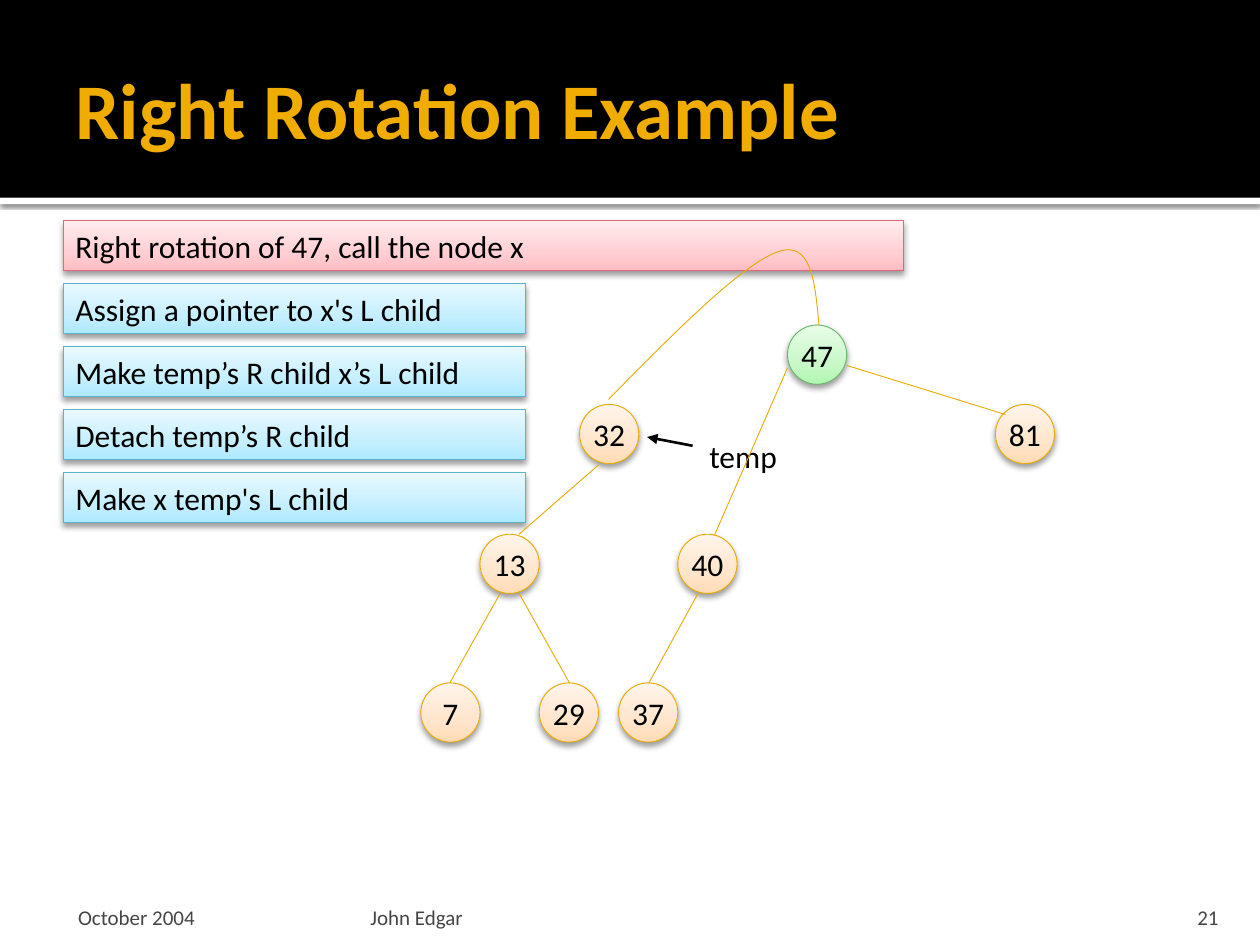
from copy import deepcopy
from dataclasses import dataclass

from lxml.etree import SubElement
from pptx import Presentation
from pptx.dml.color import RGBColor
from pptx.enum.shapes import MSO_CONNECTOR, MSO_SHAPE
from pptx.enum.text import MSO_ANCHOR, PP_ALIGN
from pptx.oxml.ns import qn
from pptx.util import Inches, Pt


@dataclass(frozen=True)
class Theme:
    font: str = "Calibri"
    title_size: int = 45
    body_size: int = 18
    footer_size: int = 12
    black: str = "000000"
    white: str = "FFFFFF"
    title: str = "F0AD00"
    footer: str = "454545"
    edge: str = "EBA900"
    red: tuple = ("FFBCC2", "FFCFD3", "FFEDEE", "E46778")
    blue: tuple = ("ADE9FF", "C5EFFF", "E9F9FF", "5BB3CA")
    green: tuple = ("B0F6B1", "C8F8C8", "E9FDE9", "67B569")
    orange: tuple = ("FFDBB5", "FFE5CB", "FFF5EB", "EBA900")


theme = Theme()


def write(shape, text, size, color, margins, align=PP_ALIGN.LEFT, anchor=MSO_ANCHOR.MIDDLE, bold=False):
    frame = shape.text_frame
    frame.text = text
    frame.word_wrap = True
    frame.vertical_anchor = anchor
    frame.margin_left, frame.margin_top, frame.margin_right, frame.margin_bottom = map(Inches, margins)
    para = frame.paragraphs[0]
    para.alignment = align
    font = para.runs[0].font
    font.name, font.size, font.bold = theme.font, Pt(size), bold
    font.color.rgb = RGBColor.from_string(color)


def add_panel(kind, place, colors, shadow=(38, 3.5, 2)):
    shape = slide.shapes.add_shape(kind, *map(Inches, place))
    shape.shadow.inherit = False
    if len(colors) == 1:
        shape.fill.solid()
        shape.fill.fore_color.rgb = RGBColor.from_string(colors[0])
        shape.line.fill.background()
    else:
        shape.fill.gradient()
        shape.fill.gradient_angle = 90
        stops = shape._element.spPr.find(qn("a:gradFill")).find(qn("a:gsLst"))
        stops.insert(1, deepcopy(stops[0]))
        for stop, position, color in zip(shape.fill.gradient_stops, (0, 0.35, 1), colors):
            stop.position = position
            stop.color.rgb = RGBColor.from_string(color)
        shape.line.color.rgb = RGBColor.from_string(colors[3])
        shape.line.width = Pt(0.5)
    if shadow:
        alpha, blur, distance = shadow
        effects = shape._element.spPr.find(qn("a:effectLst"))
        outer = SubElement(effects, qn("a:outerShdw"), blurRad=str(Pt(blur)), dist=str(Pt(distance)),
                           dir="5400000", rotWithShape="0")
        tint = SubElement(outer, qn("a:srgbClr"), val=theme.black)
        SubElement(tint, qn("a:alpha"), val=str(alpha * 1000))
    return shape


deck = Presentation()
deck.slide_width, deck.slide_height = Inches(10), Inches(7.5)
slide = deck.slides.add_slide(deck.slide_layouts[5])

add_panel(MSO_SHAPE.RECTANGLE, (0, 1.57, 10, 0.05), (theme.white,), (60, 2.5, 0.8))
add_panel(MSO_SHAPE.RECTANGLE, (0, 0, 10, 1.57), (theme.black,), None)

title = slide.shapes.title
title.left, title.top, title.width, title.height = map(Inches, (0.5, 0.17, 9, 1.37))
write(title, "Right Rotation Example", theme.title_size, theme.title, (0.1, 0.05, 0.05, 0.05), bold=True)
slide.shapes._spTree.append(title._element)

footers = [
    ("October 2004", 0.5, 2.33, 0.12, 0.05, PP_ALIGN.LEFT),
    ("John Edgar", 2.89, 6.02, 0.05, 0.05, PP_ALIGN.LEFT),
    ("21", 8.97, 0.8, 0.1, 0.1, PP_ALIGN.RIGHT),
]
for text, left, width, inset_left, inset_right, align in footers:
    box = slide.shapes.add_textbox(Inches(left), Inches(7.08), Inches(width), Inches(0.3))
    write(box, text, theme.footer_size, theme.footer, (inset_left, 0.05, inset_right, 0), align, MSO_ANCHOR.BOTTOM)

steps = [
    ("Right rotation of 47, call the node x", 6.67, theme.red),
    ("Assign a pointer to x's L child", 3.67, theme.blue),
    ("Make temp’s R child x’s L child", 3.67, theme.blue),
    ("Detach temp’s R child", 3.67, theme.blue),
    ("Make x temp's L child", 3.67, theme.blue),
]
for row, (text, width, colors) in enumerate(steps):
    step = add_panel(MSO_SHAPE.RECTANGLE, (0.5, 1.75 + 0.5 * row, width, 0.4), colors)
    write(step, text, theme.body_size, theme.black, (0.1, 0.05, 0.1, 0.05))

nodes = [
    ("47", 6.25, 2.58), ("81", 7.9, 3.21), ("32", 4.6, 3.21), ("13", 3.81, 4.24),
    ("40", 5.38, 4.24), ("7", 3.34, 5.42), ("29", 4.28, 5.42), ("37", 4.91, 5.42),
]
for text, left, top in nodes:
    colors = theme.green if text == "47" else theme.orange
    node = add_panel(MSO_SHAPE.OVAL, (left, top, 0.47, 0.47), colors)
    write(node, text, theme.body_size, theme.black, (0, 0, 0, 0), PP_ALIGN.CENTER)
    node.text_frame.word_wrap = False

callout = slide.shapes.add_shape(MSO_SHAPE.LINE_CALLOUT_1_NO_BORDER, *map(Inches, (5.58, 3.42, 0.83, 0.4)))
for index, value in enumerate((0.296, -0.1, 0.123, -0.535)):
    callout.adjustments[index] = value
callout.shadow.inherit = False
callout.fill.background()
callout.line.color.rgb = RGBColor.from_string(theme.black)
callout.line.width = Pt(1.5)
SubElement(callout.line._get_or_add_ln(), qn("a:tailEnd"), type="triangle")
write(callout, "temp", theme.body_size, theme.black, (0.05,) * 4, anchor=MSO_ANCHOR.TOP)

edges = [
    (3.57, 5.42, 3.97, 4.71), (4.52, 5.42, 4.12, 4.71), (4.75, 3.69, 4.12, 4.24),
    (6.72, 2.9, 7.98, 3.29), (5.15, 5.42, 5.54, 4.71), (6.25, 2.92, 5.67, 4.25),
]
for ends in edges:
    edge = slide.shapes.add_connector(MSO_CONNECTOR.STRAIGHT, *map(Inches, ends))
    edge.line.color.rgb = RGBColor.from_string(theme.edge)
    edge.line.width = Pt(0.5)
    SubElement(edge._element.spPr, qn("a:effectLst"))

curve_points = [(5.36, 2.63), (5.89, 2.1), (6.17, 2), (6.44, 1.9), (6.47, 2.24), (6.5, 2.58)]
builder = slide.shapes.build_freeform(Inches(4.83), Inches(3.17))
builder.add_line_segments([(Inches(x), Inches(y)) for x, y in curve_points], close=False)
curve = builder.convert_to_shape()
curve.shadow.inherit = False
curve.fill.background()
curve.line.color.rgb = RGBColor.from_string(theme.edge)
curve.line.width = Pt(0.5)
outline = next(curve._element.iter(qn("a:path")))
segments = outline.findall(qn("a:lnTo"))
for start in range(0, len(segments), 3):
    bezier = SubElement(outline, qn("a:cubicBezTo"))
    for segment in segments[start:start + 3]:
        bezier.append(segment[0])
        outline.remove(segment)

deck.save("out.pptx")
